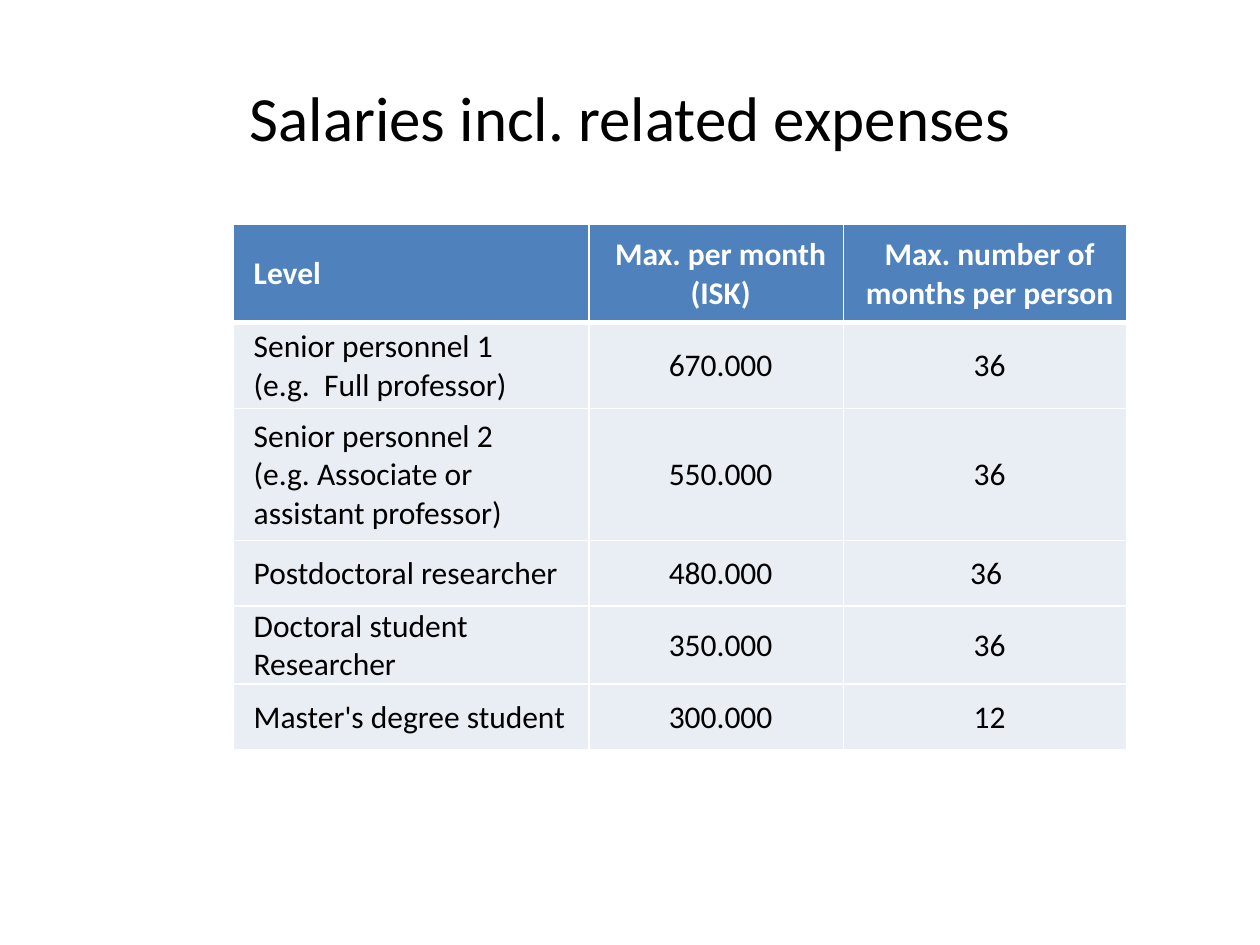
from lxml import etree
from pptx import Presentation
from pptx import util as u
from pptx.dml.color import RGBColor
from pptx.enum import text
from pptx.oxml import ns

COLORS = {"header": "4F81BD", "body": "E9EDF4", "line": "FFFFFF",
          "light": "FFFFFF", "dark": "000000"}
COLUMN_WIDTHS = [203, 145.5, 162]
ROW_HEIGHTS = [56.2, 49, 75.6, 37.4, 37.4, 37.4]
SALARIES = [
    ["Level", "Max. per month (ISK)", "Max. number of months per person"],
    ["Senior personnel 1\n(e.g.  Full professor)", "670.000", "36"],
    ["Senior personnel 2\n(e.g. Associate or assistant professor)", "550.000", "36"],
    ["Postdoctoral researcher", "480.000", "36 "],
    ["Doctoral student\nResearcher", "350.000", "36"],
    ["Master's degree student", "300.000", "12"],
]


def apply(target, **values):
    """Set each named value as an attribute of the target."""
    for name, value in values.items():
        setattr(target, name, value)


def write(frame, wording, align, color, **font):
    """Fill a text frame and format all of its paragraphs."""
    frame.text = wording
    for para in frame.paragraphs:
        para.alignment = align
        for span in para.runs:
            apply(span.font, name="Calibri", **font)
            span.font.color.rgb = RGBColor.from_string(COLORS[color])


def add_borders(cell, widths):
    """Draw the cell's edges with the given widths in points."""
    properties = cell._tc.get_or_add_tcPr()
    for side, width in widths.items():
        line = etree.SubElement(properties, ns.qn(f"a:ln{side}"), w=str(u.Pt(width)))
        fill = etree.SubElement(line, ns.qn("a:solidFill"))
        etree.SubElement(fill, ns.qn("a:srgbClr"), val=COLORS["line"])


def place_title(page, left, top, width, height):
    """Place the slide title in the given box."""
    title = page.shapes.title
    apply(title, left=u.Pt(left), top=u.Pt(top), width=u.Pt(width), height=u.Pt(height))
    title.text_frame.vertical_anchor = text.MSO_ANCHOR.MIDDLE
    write(title.text_frame, "Salaries incl. related expenses",
          text.PP_ALIGN.CENTER, "dark", size=u.Pt(36))


def format_cell(cell, wording, row, column):
    """Write one salary cell and style it by its row and column."""
    header, first = row == 0, column == 0
    apply(cell, vertical_anchor=text.MSO_ANCHOR.MIDDLE,
          margin_left=u.Pt(11.5 if first else 5.8), margin_top=u.Pt(0.7),
          margin_right=u.Pt(0.7), margin_bottom=u.Pt(0))
    write(cell.text_frame, wording,
          text.PP_ALIGN.LEFT if first else text.PP_ALIGN.CENTER,
          "light" if header else "dark", size=u.Pt(18), bold=header)
    add_borders(cell, {"L": 1, "R": 1, "T": 3 if row == 1 else 1, "B": 3 if header else 1})
    cell.fill.solid()
    cell.fill.fore_color.rgb = RGBColor.from_string(COLORS["header" if header else "body"])


def place_table(page, left, top):
    """Place the salary table with its corner at the given point."""
    table = page.shapes.add_table(
        len(ROW_HEIGHTS), len(COLUMN_WIDTHS), u.Pt(left), u.Pt(top),
        u.Pt(sum(COLUMN_WIDTHS)), u.Pt(sum(ROW_HEIGHTS))).table
    table.horz_banding = False
    for column, width in zip(table.columns, COLUMN_WIDTHS):
        column.width = u.Pt(width)
    for row, height in zip(table.rows, ROW_HEIGHTS):
        row.height = u.Pt(height)
    for row, wordings in enumerate(SALARIES):
        for column, wording in enumerate(wordings):
            format_cell(table.cell(row, column), wording, row, column)


def main():
    """Build the salary slide and save the deck."""
    deck = Presentation()
    apply(deck, slide_width=u.Pt(720), slide_height=u.Pt(540))
    page = deck.slides.add_slide(deck.slide_layouts.get_by_name("Title Only"))
    place_title(page, 36, 21.6, 648, 90)
    place_table(page, 133.5, 128.2)
    deck.save("out.pptx")


if __name__ == "__main__":
    main()
